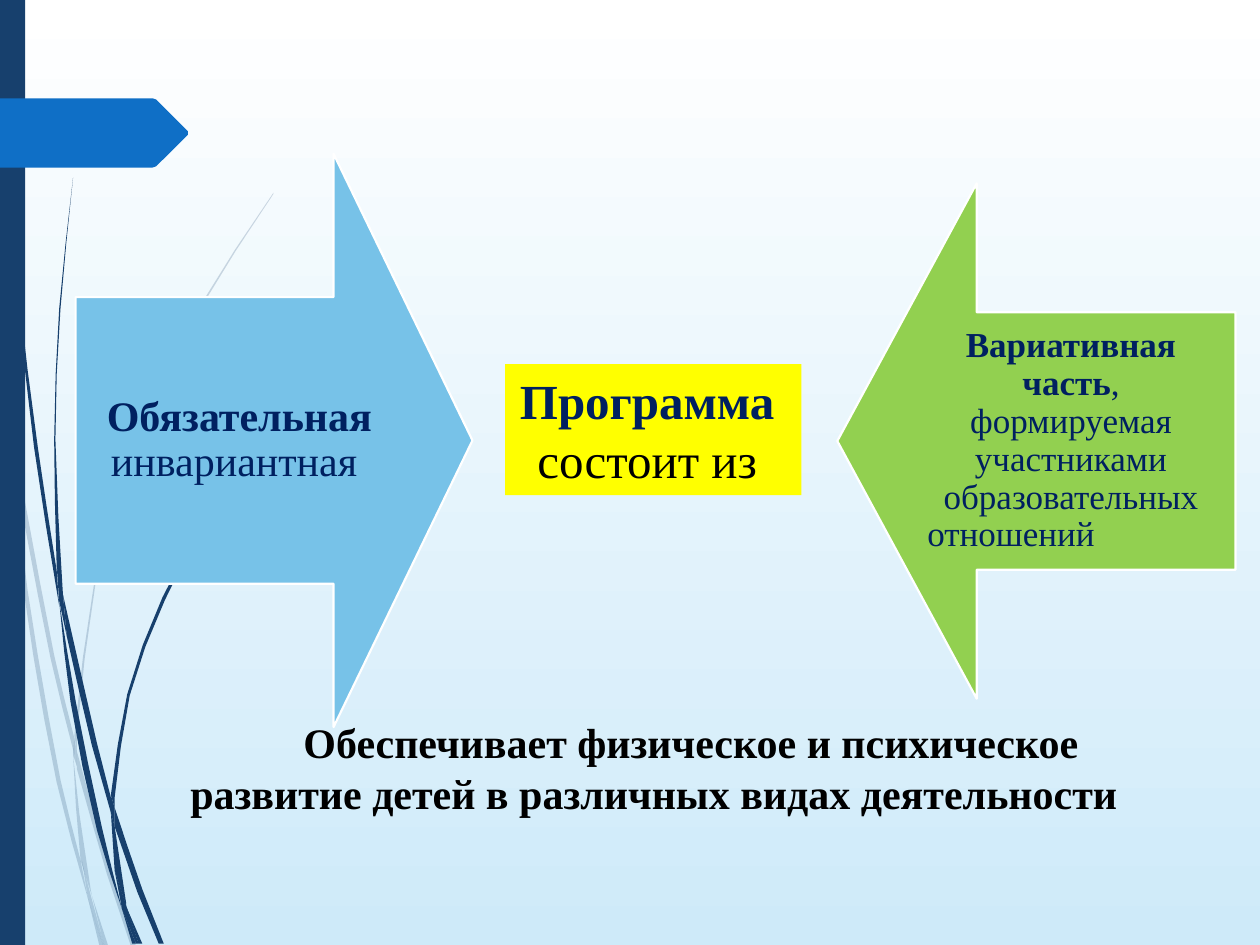
from math import ceil, dist

from lxml import etree
from pptx import Presentation
from pptx.dml.color import RGBColor
from pptx.enum.shapes import MSO_SHAPE
from pptx.enum.text import MSO_ANCHOR, MSO_AUTO_SIZE, PP_ALIGN
from pptx.oxml.ns import qn
from pptx.util import Pt

RECTANGLE, DOWN_ARROW = MSO_SHAPE.RECTANGLE, MSO_SHAPE.DOWN_ARROW
TOP, MIDDLE = MSO_ANCHOR.TOP, MSO_ANCHOR.MIDDLE
CENTER, LEFT = PP_ALIGN.CENTER, PP_ALIGN.LEFT
FIXED, GROW = MSO_AUTO_SIZE.NONE, MSO_AUTO_SIZE.SHAPE_TO_FIT_TEXT

PX = 9144
WIDTH, HEIGHT = 1000, 750
CURVE_STEP = 64

THEME = {
    "font": "Times New Roman",
    "sky": ("FFFFFF", "CEEAF9"),
    "grass": "17406D", "banner": "0F6FC6",
    "required": "77C2E8", "variable": "92D050", "program": "FFFF00",
    "outline": "FFFFFF", "ink": "002060", "black": "000000",
    "large": 28, "medium": 24, "small": 20,
    "outline_width": 1.25, "faint_alpha": 20,
}

FAINT_BLADES = [
    [[(8, 350), (0, 282)], [(0, 299), (8, 350)]],
    [[(59, 586), (43, 520), (10, 345)], [(12, 376), (40, 522), (59, 599)]],
    [[(61, 610), (85, 694), (104, 751)], [(108, 751), (88, 692), (61, 596)]],
    [[(83, 751)], [(86, 751), (73, 711)]],
    [[(70, 714), (64, 683), (48, 619), (22, 469), (8, 350)],
     [(8, 350), (19, 470), (45, 621), (70, 714)]],
    [[(58, 599), (64, 683), (73, 711)], [(72, 706), (63, 646), (58, 599)]],
    [[(61, 584), (76, 462), (111, 349), (159, 245), (217, 154)],
     [(217, 153), (158, 244), (110, 348), (75, 461), (59, 584)], [(61, 596)]],
    [[(70, 714), (79, 751)], [(82, 751)]],
    [[(61, 608), (61, 596)], [(59, 586)], [(58, 599)]],
    [[(67, 692), (65, 683)], [(70, 714), (82, 751)], [(83, 751), (67, 692)]],
]
DARK_BLADES = [
    [[(5, 110), (14, 233), (27, 355), (47, 481)],
     [(45, 453), (30, 355), (15, 232), (6, 109), (3, 0)], [(2, 0), (5, 110)]],
    [[(88, 633), (77, 590), (50, 472)], [(53, 505), (73, 592), (88, 645)]],
    [[(91, 656), (109, 708), (126, 749)], [(130, 749), (113, 706), (91, 641)]],
    [[(97, 722), (81, 657), (60, 556), (47, 477)],
     [(47, 477), (56, 557), (77, 659), (97, 722)]],
    [[(50, 472), (44, 349), (48, 245), (58, 141)],
     [(58, 141), (47, 245), (43, 349), (45, 449)], [(49, 472)]],
    [[(110, 749)], [(113, 749), (100, 719)]],
    [[(47, 477), (53, 505)], [(50, 472), (45, 449)]],
    [[(91, 633), (103, 552), (131, 476), (169, 406), (216, 344)],
     [(215, 344), (168, 405), (129, 474), (101, 551), (88, 631)], [(91, 641)]],
    [[(97, 722), (105, 749)], [(108, 749)]],
    [[(88, 645), (91, 691), (100, 719)], [(100, 716), (91, 656), (88, 645)]],
    [[(88, 645), (91, 656)], [(91, 641), (88, 631)]],
    [[(91, 691)], [(97, 722), (108, 749)], [(110, 749), (96, 706)]],
]
BANNER = [[point] for point in (
    (149, 107), (124, 132), (121, 133), (0, 133),
    (0, 78), (121, 78), (124, 79), (149, 104))]

ARROWS = [
    {"box": (-10, 192, 455, 315), "rotation": 270, "fill": "required"},
    {"box": (618, 192, 409, 316), "rotation": 90, "fill": "variable"},
]
CAPTION = {
    "box": (117, 564, 804, 91), "size": "medium", "indent": 59,
    "frame": {"word_wrap": True, "auto_size": GROW, "vertical_anchor": TOP},
    "paragraphs": [(CENTER, [
        ("Обеспечивает физическое и психическое развитие детей "
         "в различных видах деятельности", True, "black")])],
}
REQUIRED = {
    "box": (60, 236, 260, 227), "size": "medium", "inset": 19, "spacing": 0.9,
    "frame": {"word_wrap": True, "auto_size": FIXED, "vertical_anchor": MIDDLE},
    "paragraphs": [(CENTER, [("Обязательная", True, "ink"),
                             (" инвариантная ", False, "ink")])],
}
VARIABLE = {
    "box": (720, 248, 260, 204), "size": "small", "inset": 16, "spacing": 0.9,
    "frame": {"word_wrap": True, "auto_size": FIXED, "vertical_anchor": MIDDLE},
    "paragraphs": [
        (CENTER, [("Вариативная часть", True, "ink"),
                  (", формируемая участниками образовательных", False, "ink")]),
        (LEFT, [("отношений", False, "ink")])],
}
PROGRAM = {
    "box": (401, 289, 235, 104), "size": "large", "fill": "program",
    "frame": {"word_wrap": False, "auto_size": GROW, "vertical_anchor": MIDDLE},
    "paragraphs": [(CENTER, [("Программа ", True, "ink")]),
                   (CENTER, [("состоит из ", False, "black")])],
}


def color(key):
    return RGBColor.from_string(THEME[key])


def emu(lengths):
    return [round(length * PX) for length in lengths]


def paint(shape, fill):
    shape.shadow.inherit = False
    shape.fill.solid()
    shape.fill.fore_color.rgb = color(fill)
    shape.line.fill.background()


def smooth(edge):
    last = len(edge) - 1
    slopes = []
    for i, point in enumerate(edge):
        before, after = edge[max(i - 1, 0)], edge[min(i + 1, last)]
        length = dist(before, point) + dist(point, after) or 1
        slopes.append([(b - a) / length for a, b in zip(before, after)])
    points = [edge[0]]
    for i in range(last):
        span = dist(edge[i], edge[i + 1])
        steps = ceil(span / CURVE_STEP)
        for step in range(1, steps + 1):
            t = step / steps
            blend = t * t * (3 - 2 * t)
            leave, arrive = span * t * (1 - t) ** 2, span * t * t * (t - 1)
            points.append([
                a + (b - a) * blend + m * leave + n * arrive
                for a, b, m, n in zip(edge[i], edge[i + 1], slopes[i], slopes[i + 1])])
    return points


def add_outline(slide, edges, fill, alpha=None):
    points = [emu(point) for edge in edges for point in smooth(edge)]
    builder = slide.shapes.build_freeform(*points[0])
    builder.add_line_segments(points[1:], close=True)
    outline = builder.convert_to_shape()
    paint(outline, fill)
    if alpha:
        tint = outline.fill._xPr.find(f".//{qn('a:srgbClr')}")
        etree.SubElement(tint, qn("a:alpha"), val=str(alpha * 1000))


def add_arrow(slide, box, rotation, fill):
    arrow = slide.shapes.add_shape(DOWN_ARROW, *emu(box))
    paint(arrow, fill)
    arrow.rotation = rotation
    arrow.adjustments[0], arrow.adjustments[1] = 0.5, 0.35
    arrow.line.color.rgb = color("outline")
    arrow.line.width = Pt(THEME["outline_width"])


def add_text(slide, content):
    if "fill" in content:
        label = slide.shapes.add_shape(RECTANGLE, *emu(content["box"]))
        paint(label, content["fill"])
    else:
        label = slide.shapes.add_textbox(*emu(content["box"]))
    frame = label.text_frame
    for name, value in content["frame"].items():
        setattr(frame, name, value)
    if "inset" in content:
        for side in ("left", "right", "top", "bottom"):
            setattr(frame, f"margin_{side}", content["inset"] * PX)
    for i, (alignment, runs) in enumerate(content["paragraphs"]):
        paragraph = frame.add_paragraph() if i else frame.paragraphs[0]
        paragraph.alignment = alignment
        paragraph.line_spacing = content.get("spacing", 1.0)
        if "indent" in content:
            paragraph._p.get_or_add_pPr().set("indent", str(content["indent"] * PX))
        for text, bold, ink in runs:
            run = paragraph.add_run()
            run.text = text
            style = {"name": THEME["font"], "size": Pt(THEME[content["size"]]), "bold": bold}
            for name, value in style.items():
                setattr(run.font, name, value)
            run.font.color.rgb = color(ink)


def main():
    deck = Presentation()
    deck.slide_width, deck.slide_height = emu((WIDTH, HEIGHT))
    slide = deck.slides.add_slide(deck.slide_layouts[6])
    sky = slide.background.fill
    sky.gradient()
    sky.gradient_angle = 270
    for stop, shade in zip(sky.gradient_stops, THEME["sky"]):
        stop.color.rgb = RGBColor.from_string(shade)

    for blade in FAINT_BLADES:
        add_outline(slide, blade, "grass", THEME["faint_alpha"])
    for blade in DARK_BLADES:
        add_outline(slide, blade, "grass")
    paint(slide.shapes.add_shape(RECTANGLE, *emu((0, 0, 20, HEIGHT))), "grass")
    add_outline(slide, BANNER, "banner")

    add_text(slide, CAPTION)
    for arrow, label in zip(ARROWS, (REQUIRED, VARIABLE)):
        add_arrow(slide, **arrow)
        add_text(slide, label)
    add_text(slide, PROGRAM)
    deck.save("out.pptx")


if __name__ == "__main__":
    main()
